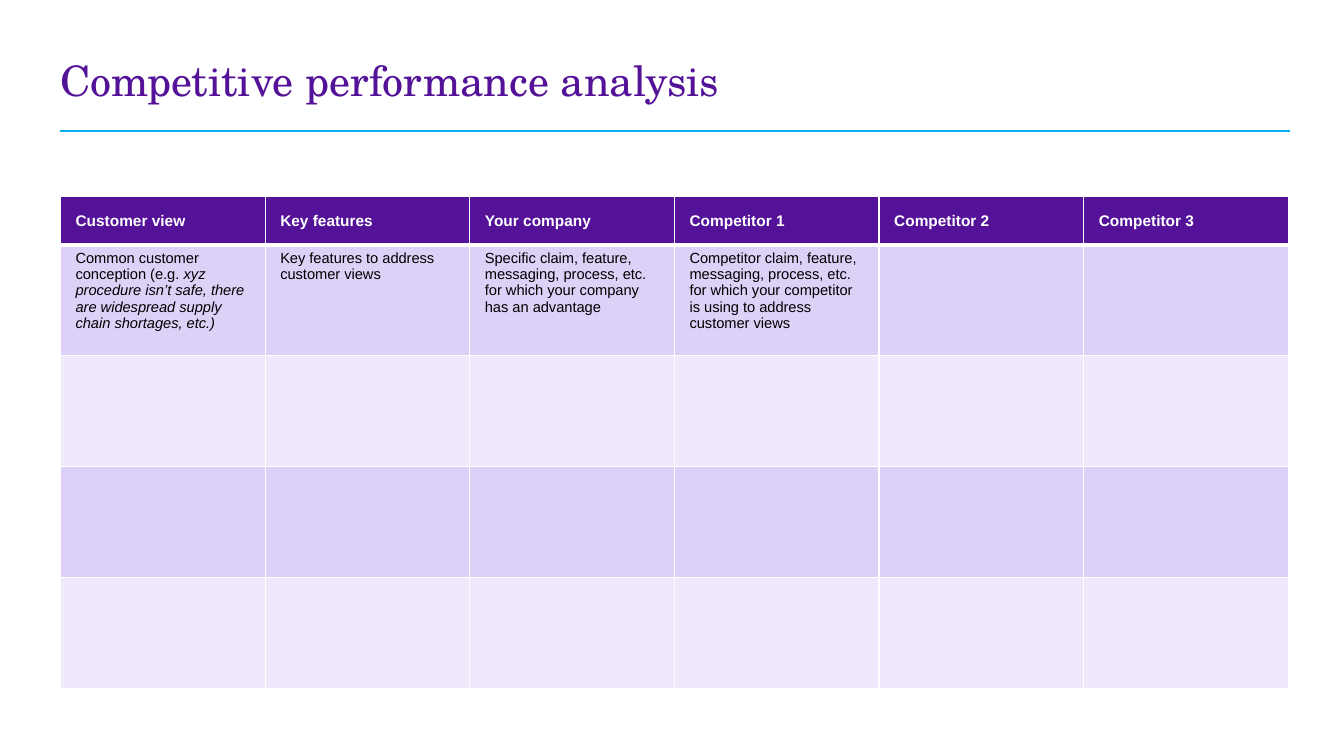
from lxml import etree
from pptx import Presentation
from pptx.dml.color import RGBColor
from pptx.enum import shapes, text
from pptx.oxml import ns
from pptx.util import Pt

COLORS = {
    "purple": "541299",
    "band_dark": "DED1F8",
    "band_light": "EFE9FB",
    "accent": "00B0F0",
    "white": "FFFFFF",
    "black": "000000",
}
HEADERS = ["Customer view", "Key features", "Your company",
           "Competitor 1", "Competitor 2", "Competitor 3"]
GUIDANCE = [
    [("Common customer conception (e.g. ", False),
     ("xyz procedure isn’t safe, there are widespread supply chain shortages, etc.)", True)],
    [("Key features to address customer views", False)],
    [("Specific claim, feature, messaging, process, etc. "
      "for which your company has an advantage", False)],
    [("Competitor claim, feature, messaging, process, etc. "
      "for which your competitor is using to address customer views", False)],
]
BODY_ROWS = 4
LEFT = 43.2
COL_WIDTH = 146.2
HEADER_HEIGHT, BODY_HEIGHT = 34.4, 79.2


def rgb(name):
    return RGBColor.from_string(COLORS[name])


def add_text(p, content, size=10.5, font="Arial", color="black", bold=False, italic=False):
    r = p.add_run()
    r.text = content
    f = r.font
    f.size, f.name, f.bold, f.italic = Pt(size), font, bold, italic
    f.color.rgb = rgb(color)


def add_title(slide, content):
    tf = slide.shapes.add_textbox(Pt(36), Pt(26), Pt(665), Pt(66.5)).text_frame
    tf.word_wrap = True
    tf.vertical_anchor = text.MSO_ANCHOR.MIDDLE
    p = tf.paragraphs[0]
    p.line_spacing = 0.9
    add_text(p, content, size=30, font="TeX Gyre Schola", color="purple")


def add_rule(slide, x1, x2, y):
    line = slide.shapes.add_connector(
        shapes.MSO_CONNECTOR.STRAIGHT, Pt(x1), Pt(y), Pt(x2), Pt(y))
    line.line.color.rgb = rgb("accent")
    line.line.width = Pt(1.5)
    etree.SubElement(line._element.spPr, ns.qn("a:effectLst"))


def set_borders(cell, **widths):
    """Draw white cell borders; widths maps L, R, T, B to points, 1 by default."""
    props = cell._tc.get_or_add_tcPr()
    for side in "LRTB":
        ln = etree.SubElement(props, ns.qn(f"a:ln{side}"), w=str(Pt(widths.get(side, 1))))
        fill = etree.SubElement(ln, ns.qn("a:solidFill"))
        etree.SubElement(fill, ns.qn("a:srgbClr"), val=COLORS["white"])


def style_cell(cell, color, **widths):
    set_borders(cell, **widths)
    cell.fill.solid()
    cell.fill.fore_color.rgb = rgb(color)
    cell.margin_left = cell.margin_right = Pt(10.8)
    cell.margin_top = cell.margin_bottom = Pt(3.6)


def add_analysis_table(slide):
    cols = len(HEADERS)
    table = slide.shapes.add_table(
        BODY_ROWS + 1, cols, Pt(LEFT), Pt(140.5), Pt(COL_WIDTH * cols),
        Pt(HEADER_HEIGHT + BODY_HEIGHT * BODY_ROWS)).table
    for col in table.columns:
        col.width = Pt(COL_WIDTH)
    for i, row in enumerate(table.rows):
        row.height = Pt(BODY_HEIGHT if i else HEADER_HEIGHT)

    for c, header in enumerate(HEADERS):
        cell = table.cell(0, c)
        style_cell(cell, "purple", B=3)
        cell.vertical_anchor = text.MSO_ANCHOR.MIDDLE
        add_text(cell.text_frame.paragraphs[0], header, size=11, color="white", bold=True)
        for r in range(1, BODY_ROWS + 1):
            style_cell(table.cell(r, c), "band_dark" if r % 2 else "band_light",
                       T=3 if r == 1 else 1)

    for c, runs in enumerate(GUIDANCE):
        p = table.cell(1, c).text_frame.paragraphs[0]
        for content, italic in runs:
            add_text(p, content, italic=italic)


def main():
    prs = Presentation()
    prs.slide_width, prs.slide_height = Pt(960), Pt(540)
    slide = prs.slides.add_slide(prs.slide_layouts[6])
    add_analysis_table(slide)
    add_rule(slide, LEFT, 921.6, 93.8)
    add_title(slide, "Competitive performance analysis")
    prs.save("out.pptx")


if __name__ == "__main__":
    main()
